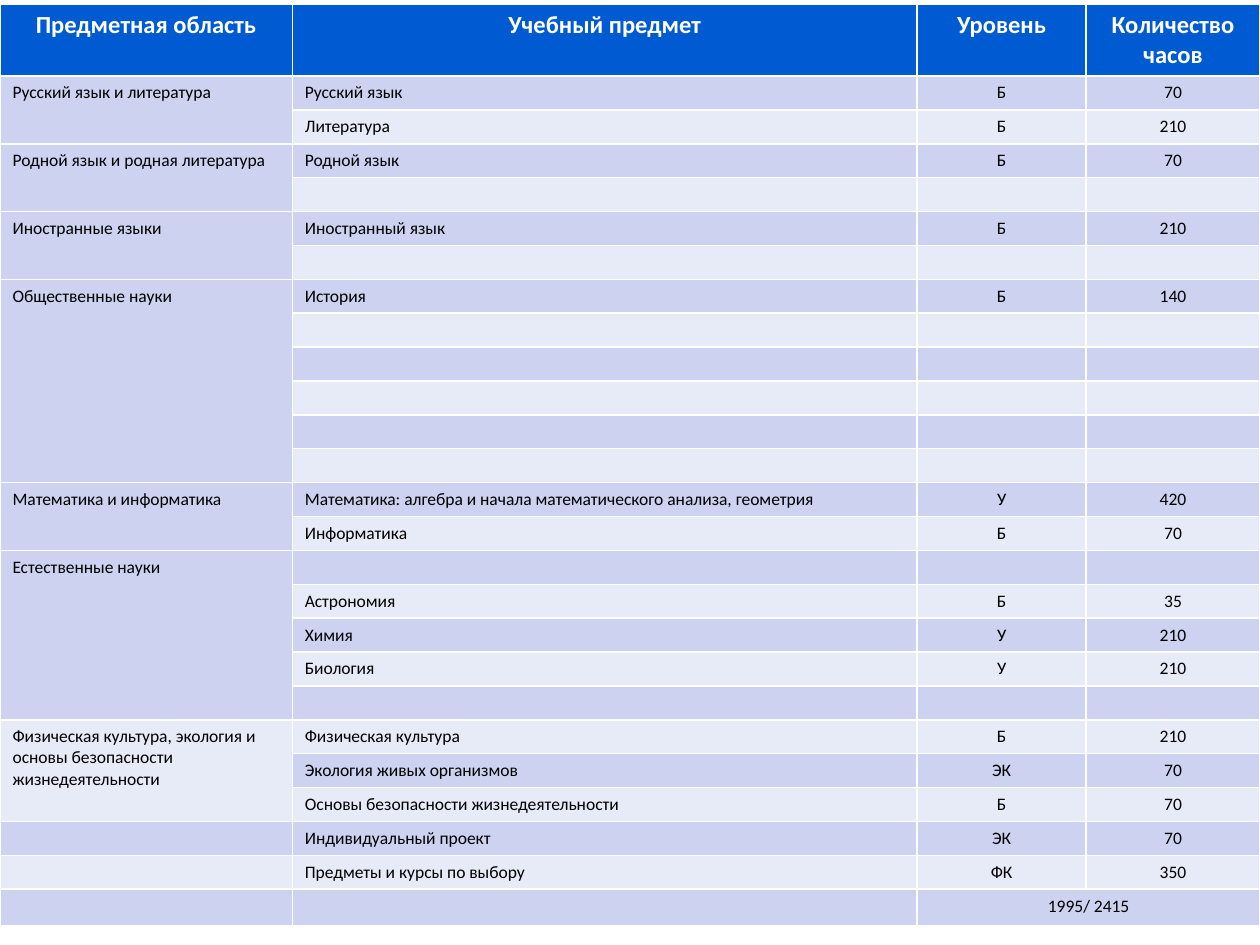
from pptx import Presentation
from pptx.dml.color import RGBColor
from pptx.enum.text import PP_ALIGN
from pptx.util import Inches, Pt

LEFT, CENTER = PP_ALIGN.LEFT, PP_ALIGN.CENTER
BLUE = RGBColor(0x00, 0x5B, 0xD3)
BAND_DARK = RGBColor(0xCC, 0xD2, 0xEF)
BAND_LIGHT = RGBColor(0xE7, 0xEA, 0xF7)
WHITE = RGBColor(0xFF, 0xFF, 0xFF)
BLACK = RGBColor(0x00, 0x00, 0x00)

HEADINGS = ("Предметная область", "Учебный предмет", "Уровень", "Количество часов")
EMPTY = ("", "", "")
# Each area with its rows of subject, level, hours
AREAS = [
    ("Русский язык и литература", [
        ("Русский язык", "Б", "70"),
        ("Литература", "Б", "210")]),
    ("Родной язык и родная литература", [("Родной язык", "Б", "70"), EMPTY]),
    ("Иностранные языки", [("Иностранный язык", "Б", "210"), EMPTY]),
    ("Общественные науки", [("История", "Б", "140")] + [EMPTY] * 5),
    ("Математика и информатика", [
        ("Математика: алгебра и начала математического анализа, геометрия", "У", "420"),
        ("Информатика", "Б", "70")]),
    ("Естественные науки", [
        EMPTY,
        ("Астрономия", "Б", "35"),
        ("Химия", "У", "210"),
        ("Биология", "У", "210"),
        EMPTY]),
    ("Физическая культура, экология и основы безопасности жизнедеятельности", [
        ("Физическая культура", "Б", "210"),
        ("Экология живых организмов", "ЭК", "70"),
        ("Основы безопасности жизнедеятельности", "Б", "70")]),
    ("", [("Индивидуальный проект", "ЭК", "70")]),
    ("", [("Предметы и курсы по выбору", "ФК", "350")]),
    ("", [("", "1995/ 2415", "")]),
]

COLUMN_WIDTHS = (2.32, 4.96, 1.34, 1.38)
ALIGNMENTS = (LEFT, LEFT, CENTER, CENTER)
TABLE_TOP, TABLE_HEIGHT = 0.03, 7.25
HEADER_HEIGHT, TOTAL_HEIGHT = 0.54, 0.29
HEADER_FONT = {"name": "Calibri", "size": Pt(14), "bold": True}
BODY_FONT = {"name": "Calibri", "size": Pt(10), "bold": False}


def fill_cell(cell, text, fill, alignment, font, color):
    cell.fill.solid()
    cell.fill.fore_color.rgb = fill
    paragraph = cell.text_frame.paragraphs[0]
    paragraph.alignment = alignment
    if not text:
        # Keeps an empty cell from growing to the default text size
        end_format = paragraph._p.get_or_add_endParaRPr()
        end_format.set("sz", str(int(font["size"].pt * 100)))
        return
    run = paragraph.add_run()
    run.text = text
    for attribute, value in font.items():
        setattr(run.font, attribute, value)
    run.font.color.rgb = color


def main():
    presentation = Presentation()
    presentation.slide_width, presentation.slide_height = Inches(10), Inches(7.5)
    slide = presentation.slides.add_slide(presentation.slide_layouts[6])

    body_count = sum(len(subjects) for _, subjects in AREAS)
    body_height = (TABLE_HEIGHT - HEADER_HEIGHT - TOTAL_HEIGHT) / (body_count - 1)
    row_heights = [HEADER_HEIGHT] + [body_height] * (body_count - 1) + [TOTAL_HEIGHT]
    plan = slide.shapes.add_table(
        len(row_heights), len(COLUMN_WIDTHS), Inches(0), Inches(TABLE_TOP),
        Inches(sum(COLUMN_WIDTHS)), Inches(TABLE_HEIGHT)).table
    for column, width in zip(plan.columns, COLUMN_WIDTHS):
        column.width = Inches(width)
    for row, height in zip(plan.rows, row_heights):
        row.height = Inches(height)

    for column, heading in enumerate(HEADINGS):
        fill_cell(plan.cell(0, column), heading, BLUE, CENTER, HEADER_FONT, WHITE)

    row = 1
    for area, subjects in AREAS:
        first_row = row
        for subject in subjects:
            band = BAND_DARK if row % 2 else BAND_LIGHT
            values = (area if row == first_row else "",) + subject
            for column, (value, alignment) in enumerate(zip(values, ALIGNMENTS)):
                fill_cell(plan.cell(row, column), value, band, alignment, BODY_FONT, BLACK)
            row += 1
        if len(subjects) > 1:
            plan.cell(first_row, 0).merge(plan.cell(row - 1, 0))
    plan.cell(body_count, 2).merge(plan.cell(body_count, 3))

    presentation.save("out.pptx")


if __name__ == "__main__":
    main()
